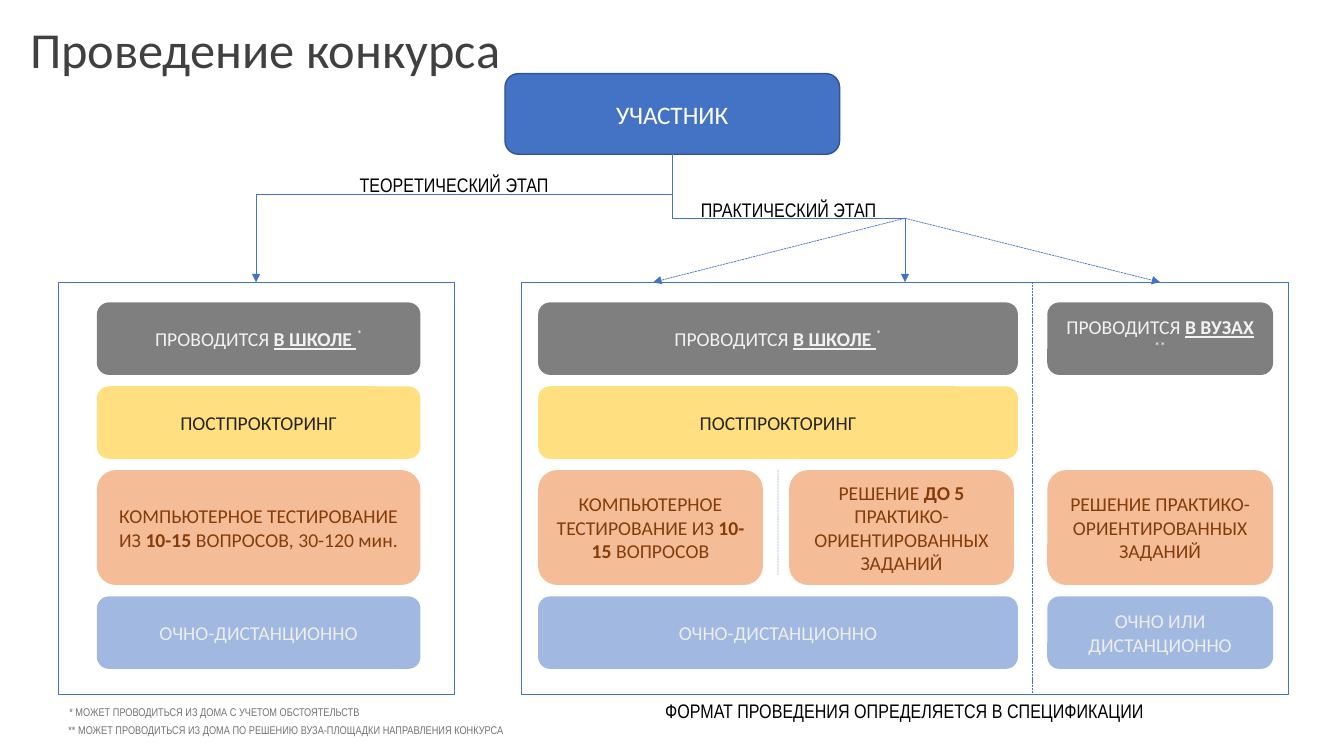
from lxml import etree
from pptx import Presentation
from pptx.dml.color import RGBColor
from pptx.enum import dml, shapes, text
from pptx.oxml import ns
from pptx.util import Pt

BLUE = "4472C4"
BOLD = {"bold": True}
MARK = {"bold": True, "underline": True}
NOTE = {"baseline": 40000}

# Card styles: height, fill, text colour
PLACE = (51.8, "000000", "F2F2F2")
PROCTOR = (51.8, "FFC000", "262626")
TASK = (82.1, "ED7D31", "843C0B")
FORMAT = (51.8, BLUE, "EDEDED")
ROWS = (PLACE, PROCTOR, TASK, FORMAT)
ROW_TOP, ROW_GAP = 14.4, 8.1


def rgb(value):
    return RGBColor.from_string(value)


def sub(parent, tag, **attrs):
    return etree.SubElement(parent, ns.qn(tag), **attrs)


def set_alpha(fill_element, percent):
    color = fill_element.find(".//" + ns.qn("a:srgbClr"))
    sub(color, "a:alpha", val=str(percent * 1000))


def write(tf, runs, size=14, font="Calibri", color="000000", center=True):
    """Runs are plain strings or (string, format) pairs."""
    p = tf.paragraphs[0]
    p.alignment = text.PP_ALIGN.CENTER if center else text.PP_ALIGN.LEFT
    for run in [runs] if isinstance(runs, str) else runs:
        words, fmt = (run, {}) if isinstance(run, str) else run
        r = p.add_run()
        r.text = words
        r.font.size, r.font.name = Pt(size), font
        r.font.color.rgb = rgb(color)
        r.font.bold = fmt.get("bold")
        r.font.underline = fmt.get("underline")
        if "baseline" in fmt:
            r.font._element.set("baseline", str(fmt["baseline"]))


def label(s, x, y, w, h, runs, top=3.6, **fmt):
    tf = s.shapes.add_textbox(Pt(x), Pt(y), Pt(w), Pt(h)).text_frame
    tf.word_wrap = True
    tf.margin_top = Pt(top)
    write(tf, runs, **fmt)


def box(s, kind, x, y, w, h, fill=None, alpha=None, line=None, width=0.75):
    sp = s.shapes.add_shape(kind, Pt(x), Pt(y), Pt(w), Pt(h))
    sp.shadow.inherit = False
    if fill:
        sp.fill.solid()
        sp.fill.fore_color.rgb = rgb(fill)
        if alpha:
            set_alpha(sp._element.spPr, alpha)
    else:
        sp.fill.background()
    if line:
        sp.line.color.rgb = rgb(line)
        sp.line.width = Pt(width)
    else:
        sp.line.fill.background()
    sp.text_frame.word_wrap = True
    sp.text_frame.vertical_anchor = text.MSO_ANCHOR.MIDDLE
    return sp


def link(s, x1, y1, x2, y2, kind=shapes.MSO_CONNECTOR.STRAIGHT,
         color=BLUE, dash=False, arrow=False, alpha=None):
    c = s.shapes.add_connector(kind, Pt(x1), Pt(y1), Pt(x2), Pt(y2))
    c.line.color.rgb = rgb(color)
    c.line.width = Pt(0.5)
    if dash:
        c.line.dash_style = dml.MSO_LINE.SQUARE_DOT
    ln = c.line._get_or_add_ln()
    if alpha:
        set_alpha(ln, alpha)
    if arrow:
        sub(ln, "a:tailEnd", type="triangle")
    sub(c._element.spPr, "a:effectLst")
    return c


def branch(s, x1, y1, x2, y2, bend):
    """Down, across and down again; bend is the share of the first drop."""
    c = link(s, x1, y1, x2, y2, kind=shapes.MSO_CONNECTOR.ELBOW, arrow=True)
    w, h = y2 - y1, abs(x2 - x1)
    c.left, c.top = Pt((x1 + x2 - w) / 2), Pt((y1 + y2 - h) / 2)
    c.width, c.height = Pt(w), Pt(h)
    xfrm = c._element.spPr.find(ns.qn("a:xfrm"))
    for flip in ("flipH", "flipV"):
        xfrm.attrib.pop(flip, None)
    xfrm.set("rot", str((90 if x2 < x1 else 270) * 60000))
    if x2 > x1:
        xfrm.set("flipH", "1")
    geom = c._element.spPr.find(ns.qn("a:prstGeom"))
    guides = geom.find(ns.qn("a:avLst"))
    if guides is None:
        guides = sub(geom, "a:avLst")
    sub(guides, "a:gd", name="adj1", fmla=f"val {round(bend * 100000)}")


def column(s, x, y, w, cards):
    """Stack cards by row; a row holds None or (offset, width, runs) cards."""
    top = y + ROW_TOP
    for (h, fill, color), row in zip(ROWS, cards):
        for dx, card_w, runs in row or ():
            sp = box(s, shapes.MSO_SHAPE.ROUNDED_RECTANGLE,
                     x + dx, top, card_w or w, h, fill, alpha=50)
            write(sp.text_frame, runs, color=color)
        top += h + ROW_GAP


def whole(*runs):
    return [(0, None, runs)]


def frame(s, x, y, w, h):
    box(s, shapes.MSO_SHAPE.RECTANGLE, x, y, w, h, line=BLUE)


def theory(s, x, y, w, h):
    frame(s, x, y, w, h)
    column(s, x + 27.4, y, 231.1, [
        whole("ПРОВОДИТСЯ ", ("В ШКОЛЕ ", MARK), ("*", NOTE)),
        whole("ПОСТПРОКТОРИНГ"),
        whole("КОМПЬЮТЕРНОЕ ТЕСТИРОВАНИЕ ИЗ ", ("10-15", BOLD),
              " ВОПРОСОВ, 30-120 мин."),
        whole("ОЧНО-ДИСТАНЦИОННО"),
    ])


def practice(s, x, y, w, h):
    frame(s, x, y, w, h)
    link(s, x + 365.1, y, x + 365.1, y + h, dash=True)
    link(s, x + 183.6, y + 133.9, x + 183.6, y + 208.8,
         color="3965B5", dash=True, alpha=43)
    # At school
    column(s, x + 12.2, y, 342.7, [
        whole("ПРОВОДИТСЯ ", ("В ШКОЛЕ ", MARK), ("*", NOTE)),
        whole("ПОСТПРОКТОРИНГ"),
        [(0, 160.6, ["КОМПЬЮТЕРНОЕ ТЕСТИРОВАНИЕ ИЗ ", ("10-15", BOLD),
                     " ВОПРОСОВ"]),
         (179.3, 160.6, ["РЕШЕНИЕ ", ("ДО 5", BOLD),
                         " ПРАКТИКО-ОРИЕНТИРОВАННЫХ ЗАДАНИЙ"])],
        whole("ОЧНО-ДИСТАНЦИОННО"),
    ])
    # At universities
    column(s, x + 375.9, y, 161.3, [
        whole("ПРОВОДИТСЯ ", ("В ВУЗАХ ", MARK), ("**", NOTE)),
        None,
        whole("РЕШЕНИЕ ПРАКТИКО-ОРИЕНТИРОВАННЫХ ЗАДАНИЙ"),
        whole("ОЧНО ИЛИ ДИСТАНЦИОННО"),
    ])
    label(s, x, y + h - 0.7, w, 24.2,
          "ФОРМАТ ПРОВЕДЕНИЯ ОПРЕДЕЛЯЕТСЯ В СПЕЦИФИКАЦИИ",
          font="Arial Narrow")


def participant(s, x, y, w, h, stage_top):
    sp = box(s, shapes.MSO_SHAPE.ROUNDED_RECTANGLE, x, y, w, h,
             BLUE, line="325491", width=1)
    write(sp.text_frame, "УЧАСТНИК", size=18, color="FFFFFF")
    mid, bottom = x + w / 2, y + h
    fork_x, fork_y = 646.4, (bottom + stage_top) / 2
    # Stage names
    label(s, 182.9, bottom + 10, 283, 24.2, "ТЕОРЕТИЧЕСКИЙ ЭТАП",
          font="Arial Narrow")
    label(s, mid, bottom + 27.4, 166.3, 24.2, "ПРАКТИЧЕСКИЙ ЭТАП",
          font="Arial Narrow")
    # Arrows to the stages
    branch(s, mid, bottom, 182.9, stage_top, 0.31)
    branch(s, mid, bottom, fork_x, stage_top, 0.5)
    for target in (466.6, 828.7):
        link(s, fork_x, fork_y, target, stage_top, dash=True, arrow=True)


def footnotes(s, x, y, w):
    note = {"size": 8, "font": "Arial Narrow", "color": "767171",
            "center": False}
    label(s, x + 0.7, y, w, 17.3,
          "* МОЖЕТ ПРОВОДИТЬСЯ ИЗ ДОМА С УЧЕТОМ ОБСТОЯТЕЛЬСТВ", **note)
    label(s, x, y + 13, w, 17.3,
          "** МОЖЕТ ПРОВОДИТЬСЯ ИЗ ДОМА ПО РЕШЕНИЮ ВУЗА-ПЛОЩАДКИ "
          "НАПРАВЛЕНИЯ КОНКУРСА", **note)


def main():
    prs = Presentation()
    prs.slide_width, prs.slide_height = Pt(960), Pt(540)
    s = prs.slides.add_slide(prs.slide_layouts[6])
    label(s, 14.4, 7.2, 430.6, 33.8, "Проведение конкурса", top=5.5,
          size=36, color="404040", center=False)
    stage_top, stage_h = 201.6, 294.5
    theory(s, 41.8, stage_top, 283, stage_h)
    practice(s, 372.2, stage_top, 547.9, stage_h)
    participant(s, 360.7, 52.6, 239, 57.6, stage_top)
    footnotes(s, 41.8, 500.4, 352.8)
    prs.save("out.pptx")


if __name__ == "__main__":
    main()
